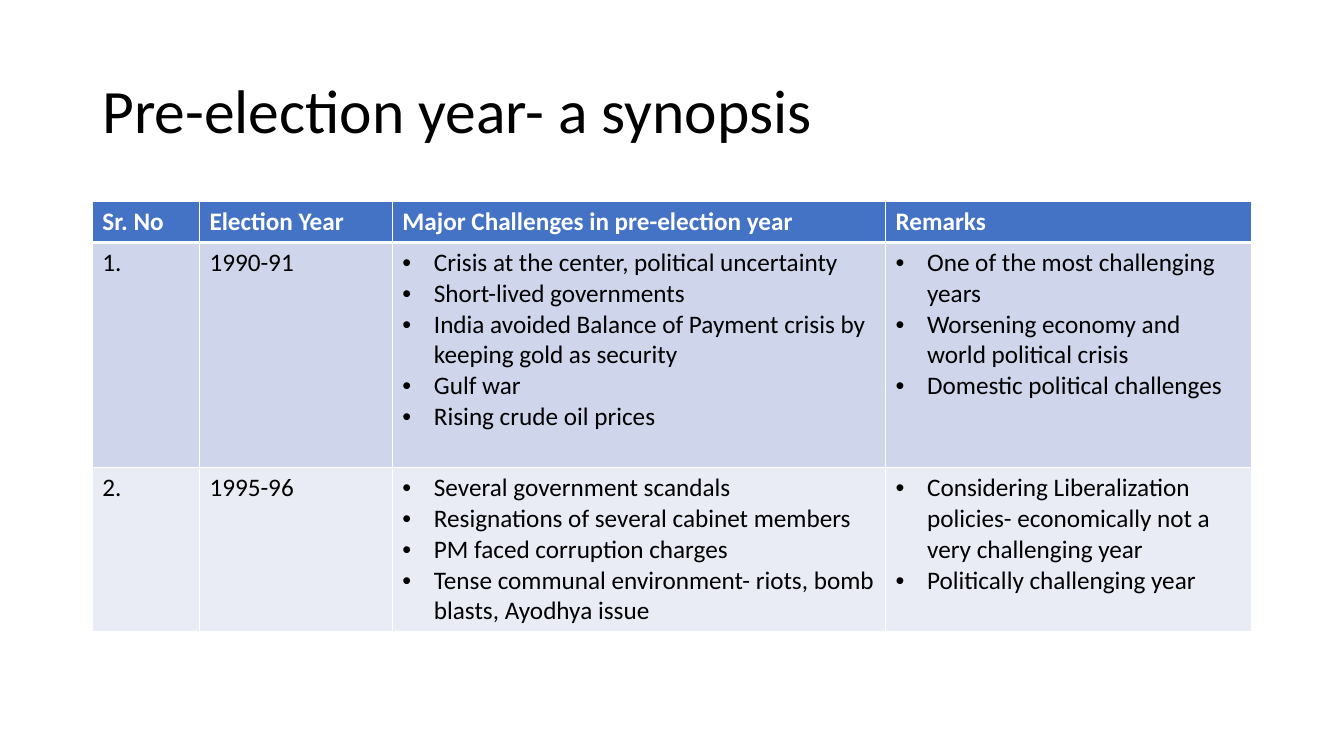
from lxml.etree import SubElement
from pptx import Presentation
from pptx.dml.color import RGBColor
from pptx.enum.text import MSO_ANCHOR
from pptx.oxml.ns import qn
from pptx.util import Pt

BLACK = RGBColor(0, 0, 0)
WHITE = RGBColor(255, 255, 255)
BLUE = RGBColor(0x44, 0x72, 0xC4)
BANDS = [RGBColor(0xCF, 0xD5, 0xEA), RGBColor(0xE9, 0xEB, 0xF5)]
FONT = "Calibri"
INDENT = 22.5
WIDTHS = [76.5, 137.8, 352.3, 261.4]
HEIGHTS = [29.2, 160.9, 117]
HEADS = ["Sr. No", "Election Year", "Major Challenges in pre-election year", "Remarks"]
YEARS = [
    ("1.", "1990-91",
     ["Crisis at the center, political uncertainty",
      "Short-lived governments",
      "India avoided Balance of Payment crisis by keeping gold as security",
      "Gulf war",
      "Rising crude oil prices"],
     ["One of the most challenging years",
      "Worsening economy and world political crisis",
      "Domestic political challenges"]),
    ("2.", "1995-96",
     ["Several government scandals",
      "Resignations of several cabinet members",
      "PM faced corruption charges",
      "Tense communal environment- riots, bomb blasts, Ayodhya issue"],
     ["Considering Liberalization policies- economically not a very challenging year",
      "Politically challenging year"]),
]


def add_bullet(para):
    props = para._p.get_or_add_pPr()
    props.set("marL", str(Pt(INDENT)))
    props.set("indent", str(-Pt(INDENT)))
    SubElement(props, qn("a:buFont"), typeface="Arial")
    SubElement(props, qn("a:buChar"), char="•")


def write(frame, text, size=18, color=BLACK, bold=False, spacing=None):
    lines = text if isinstance(text, list) else [text]
    for index, line in enumerate(lines):
        para = frame.add_paragraph() if index else frame.paragraphs[0]
        if spacing:
            para.line_spacing = spacing
        if isinstance(text, list):
            add_bullet(para)
        run = para.add_run()
        run.text = line
        run.font.name = FONT
        run.font.size = Pt(size)
        run.font.bold = bold
        run.font.color.rgb = color


def add_borders(cell, **widths):
    props = cell._tc.get_or_add_tcPr()
    for side in "LRTB":
        line = SubElement(props, qn(f"a:ln{side}"), w=str(Pt(widths.get(side, 1))))
        fill = SubElement(line, qn("a:solidFill"))
        SubElement(fill, qn("a:srgbClr"), val=str(WHITE))


def add_title(slide, left, top, width, height):
    box = slide.shapes.add_textbox(Pt(left), Pt(top), Pt(width), Pt(height))
    frame = box.text_frame
    frame.word_wrap = True
    frame.vertical_anchor = MSO_ANCHOR.MIDDLE
    write(frame, "Pre-election year- a synopsis", size=44, spacing=0.9)


def add_years(slide, left, top, width, height):
    rows = [HEADS, *YEARS]
    table = slide.shapes.add_table(
        len(rows), len(HEADS), Pt(left), Pt(top), Pt(width), Pt(height)).table
    for column, share in zip(table.columns, WIDTHS):
        column.width = Pt(width * share / sum(WIDTHS))
    for row, share in zip(table.rows, HEIGHTS):
        row.height = Pt(height * share / sum(HEIGHTS))
    for r, texts in enumerate(rows):
        head = r == 0
        edges = {"B": 3} if head else {"T": 3} if r == 1 else {}
        for c, text in enumerate(texts):
            cell = table.cell(r, c)
            add_borders(cell, **edges)
            cell.fill.solid()
            cell.fill.fore_color.rgb = BLUE if head else BANDS[(r - 1) % 2]
            write(cell.text_frame, text, color=WHITE if head else BLACK, bold=head)


def main():
    """Build the slide with its title and election table."""
    deck = Presentation()
    deck.slide_width, deck.slide_height = Pt(960), Pt(540)
    slide = deck.slides.add_slide(deck.slide_layouts[6])
    add_title(slide, 66, 28.75, 828, 104.4)
    add_years(slide, 66, 144, 828, 307.1)
    deck.save("out.pptx")


if __name__ == "__main__":
    main()
